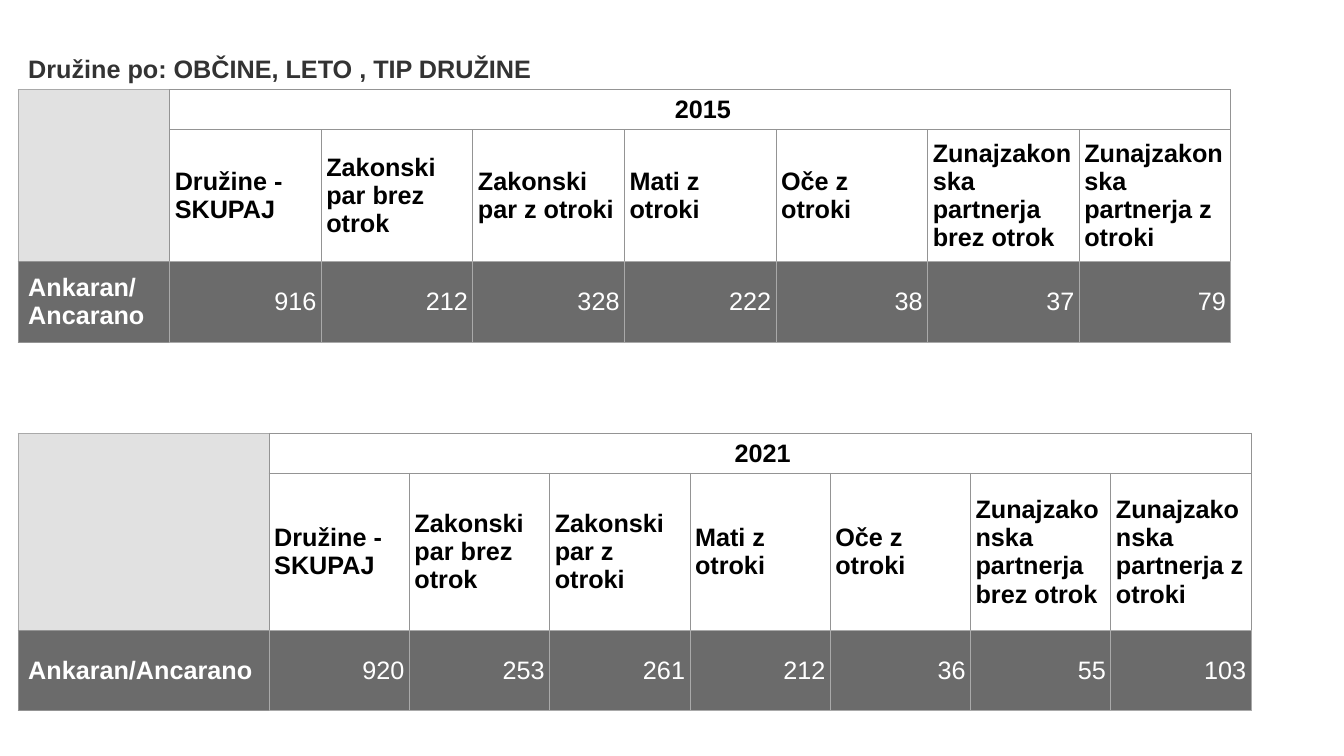
import dataclasses

import pptx
import pptx.dml.color
import pptx.enum.text
import pptx.oxml
import pptx.oxml.ns
import pptx.util

SLIDE_WIDTH = pptx.util.Inches(13.33)
SLIDE_HEIGHT = pptx.util.Inches(7.5)
GREY, LIGHT_GREY = "949494", "A9A9A9"
ALIGN = pptx.enum.text.PP_ALIGN
FAMILY_TYPES = [
    "Družine - SKUPAJ", "Zakonski par brez otrok", "Zakonski par z otroki",
    "Mati z otroki", "Oče z otroki", "Zunajzakonska partnerja brez otrok",
    "Zunajzakonska partnerja z otroki",
]


@dataclasses.dataclass
class CellStyle:
    """Borders are keyed by side; margins run left, top, right, bottom in inches."""
    borders: dict[str, str]
    fill: str | None = None
    color: str = "000000"
    bold: bool = True
    align: ALIGN = ALIGN.LEFT
    margins: tuple[float, ...] = (0.05, 0.05, 0.05, 0.05)


@dataclasses.dataclass
class FamilyTable:
    """Lengths are percentages of the slide's width or height."""
    year: str
    counts: list[int]
    top: float
    name_column: float
    count_column: float
    rows: list[float]
    header_fill: str | None = None
    heading: str | None = None


TABLES = [
    FamilyTable("2015", [916, 212, 328, 222, 38, 37, 79], 5.2, 11.28, 11.28,
                [6.67, 5.29, 17.47, 10.67], "FFFFFF",
                "Družine po: OBČINE, LETO , TIP DRUŽINE"),
    FamilyTable("2021", [920, 253, 261, 212, 36, 55, 103], 57.33, 18.68, 10.44,
                [5.29, 20.8, 10.6]),
]


def across(percent: float) -> int:
    return round(SLIDE_WIDTH * percent / 100)


def down(percent: float) -> int:
    return round(SLIDE_HEIGHT * percent / 100)


def rgb(value: str) -> pptx.dml.color.RGBColor:
    return pptx.dml.color.RGBColor.from_string(value)


def sides(left: str, top: str, right: str, bottom: str) -> dict[str, str]:
    return {"L": left, "R": right, "T": top, "B": bottom}


HEADING = CellStyle({"B": LIGHT_GREY}, "FFFFFF", "333333", margins=(0.1, 0.16, 0.05, 0.05))
CORNER = CellStyle(sides(LIGHT_GREY, LIGHT_GREY, GREY, GREY), "E1E1E1")
YEAR = CellStyle(sides(GREY, GREY, GREY, GREY), align=ALIGN.CENTER,
                 margins=(0.1, 0.05, 0.05, 0.05))
TYPE = CellStyle(sides(GREY, GREY, GREY, LIGHT_GREY))
PLACE = CellStyle(sides(GREY, GREY, LIGHT_GREY, GREY), "6B6B6B", "FFFFFF",
                  margins=(0.1, 0.1, 0.1, 0.1))
COUNT = CellStyle(sides(LIGHT_GREY, LIGHT_GREY, LIGHT_GREY, LIGHT_GREY), "6B6B6B",
                  "FFFFFF", bold=False, align=ALIGN.RIGHT)


def add_borders(cell, borders: dict[str, str]) -> None:
    properties = cell._tc.get_or_add_tcPr()
    for side, color in borders.items():
        properties.append(pptx.oxml.parse_xml(
            f'<a:ln{side} {pptx.oxml.ns.nsdecls("a")} w="9525"><a:solidFill>'
            f'<a:srgbClr val="{color}"/></a:solidFill></a:ln{side}>'))


def write_cell(cell, text: str, style: CellStyle) -> None:
    add_borders(cell, style.borders)
    if style.fill:
        cell.fill.solid()
        cell.fill.fore_color.rgb = rgb(style.fill)
    else:
        cell.fill.background()
    cell.vertical_anchor = pptx.enum.text.MSO_ANCHOR.MIDDLE
    for side, margin in zip(("left", "top", "right", "bottom"), style.margins):
        setattr(cell, f"margin_{side}", pptx.util.Inches(margin))
    para = cell.text_frame.paragraphs[0]
    para.alignment = style.align
    if text:
        span = para.add_run()
        span.text = text
        font_format = {"name": "Arial", "size": pptx.util.Pt(18), "bold": style.bold}
        for name, value in font_format.items():
            setattr(span.font, name, value)
        span.font.color.rgb = rgb(style.color)


def add_family_table(page, family: FamilyTable) -> None:
    columns = [family.name_column] + [family.count_column] * len(FAMILY_TYPES)
    frame = page.shapes.add_table(
        len(family.rows), len(columns), across(1.35), down(family.top),
        across(sum(columns)), down(sum(family.rows)))
    table = frame.table
    for flag in ("first_row", "horz_banding"):
        setattr(table, flag, False)
    for column, width in zip(table.columns, columns):
        column.width = across(width)
    for row, height in zip(table.rows, family.rows):
        row.height = down(height)

    # Heading above the grid, only where the table has one
    last = len(columns) - 1
    year_row = 0
    if family.heading:
        table.cell(0, 0).merge(table.cell(0, last))
        write_cell(table.cell(0, 0), family.heading, HEADING)
        year_row = 1

    # Corner and year
    table.cell(year_row, 0).merge(table.cell(year_row + 1, 0))
    table.cell(year_row, 1).merge(table.cell(year_row, last))
    write_cell(table.cell(year_row, 0), "", CORNER)
    year_style, type_style = (
        dataclasses.replace(style, fill=family.header_fill) for style in (YEAR, TYPE))
    write_cell(table.cell(year_row, 1), family.year, year_style)

    # Family types and their counts
    write_cell(table.cell(year_row + 2, 0), "Ankaran/Ancarano", PLACE)
    for column, (kind, count) in enumerate(zip(FAMILY_TYPES, family.counts), start=1):
        write_cell(table.cell(year_row + 1, column), kind, type_style)
        write_cell(table.cell(year_row + 2, column), str(count), COUNT)


def main() -> None:
    deck = pptx.Presentation()
    deck.slide_width, deck.slide_height = SLIDE_WIDTH, SLIDE_HEIGHT
    page = deck.slides.add_slide(deck.slide_layouts[6])
    for family in TABLES:
        add_family_table(page, family)
    deck.save("out.pptx")


if __name__ == "__main__":
    main()
